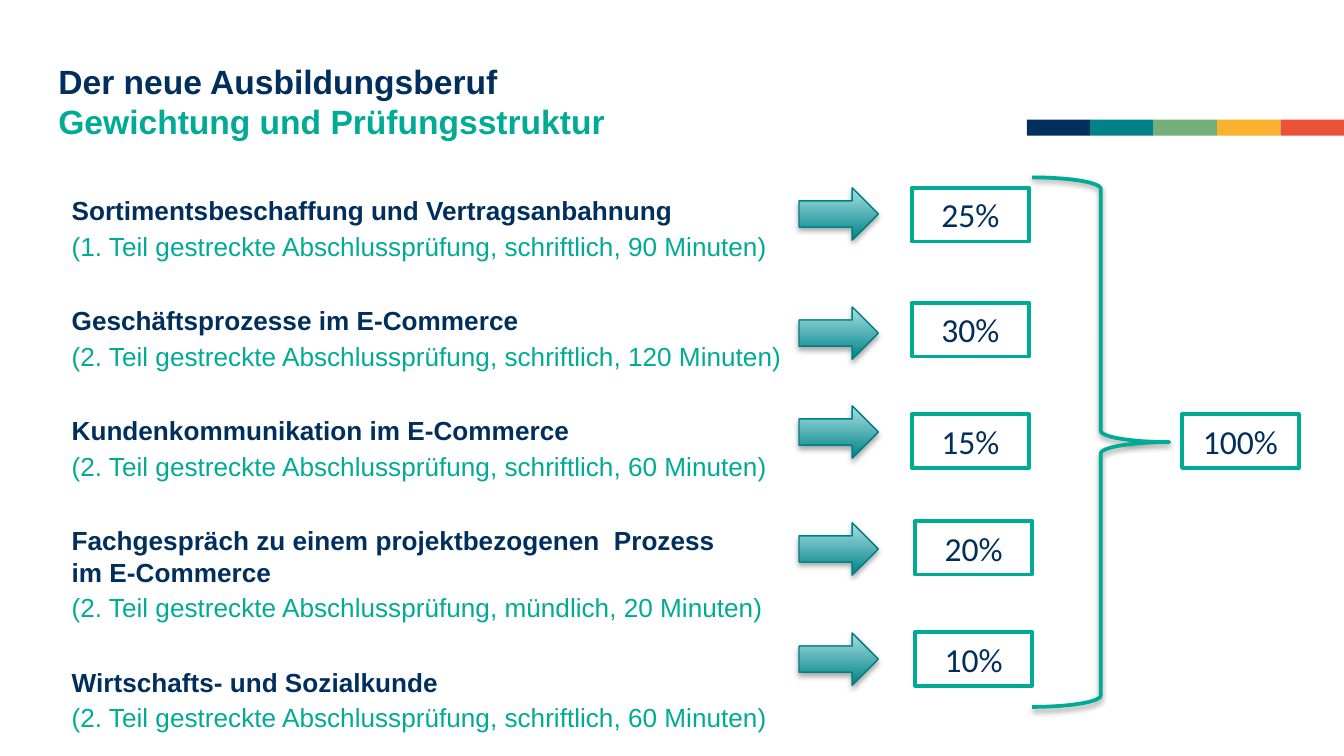
from lxml.etree import SubElement
from pptx import Presentation
from pptx.dml.color import RGBColor
from pptx.enum.shapes import MSO_SHAPE as Shape
from pptx.enum.text import MSO_ANCHOR as Anchor, MSO_AUTO_SIZE as AutoSize, PP_ALIGN as Align
from pptx.oxml.ns import qn
from pptx.util import Inches, Pt

WIDTH = Inches(10)
HEIGHT = WIDTH * 9 // 16
NAVY, GREEN, TEAL, WHITE = "002F5D", "00AB96", "008286", "FFFFFF"
STRIPES = [NAVY, TEAL, "74AF78", "F9B22F", "EA5138"]
EXAMS = [
    (["Sortimentsbeschaffung und Vertragsanbahnung"],
     "(1. Teil gestreckte Abschlussprüfung, schriftlich, 90 Minuten)"),
    (["Geschäftsprozesse im E-Commerce"],
     "(2. Teil gestreckte Abschlussprüfung, schriftlich, 120 Minuten)"),
    (["Kundenkommunikation im E-Commerce"],
     "(2. Teil gestreckte Abschlussprüfung, schriftlich, 60 Minuten)"),
    (["Fachgespräch zu einem projektbezogenen  Prozess", "im E-Commerce"],
     "(2. Teil gestreckte Abschlussprüfung, mündlich, 20 Minuten)"),
    (["Wirtschafts- und Sozialkunde"],
     "(2. Teil gestreckte Abschlussprüfung, schriftlich, 60 Minuten)"),
]
ARROW_TOPS = [24.85, 40.6, 53.69, 69.16, 83.73]
WEIGHTS = [
    ("25%", 67.85, 24.85),
    ("30%", 67.85, 40.05),
    ("15%", 67.85, 54.8),
    ("20%", 68.1, 68.9),
    ("10%", 68.1, 83.6),
    ("100%", 87.95, 54.8),
]


def color(value):
    return RGBColor.from_string(value)


def area(left, top, width, height):
    return [round(share * side / 100) for share, side in
            zip((left, top, width, height), (WIDTH, HEIGHT, WIDTH, HEIGHT))]


def add_span(para, text, size, tint, bold=False, font="Arial"):
    span = para.add_run()
    span.text = text
    span.font.name = font
    span.font.size = Pt(size)
    span.font.bold = bold
    span.font.color.rgb = color(tint)


def add_frame(page, place):
    frame = page.shapes.add_textbox(*area(*place)).text_frame
    frame.word_wrap = True
    frame.vertical_anchor = Anchor.TOP
    return frame


def next_para(frame, first):
    return frame.paragraphs[0] if first else frame.add_paragraph()


def add_figure(page, kind, place, line=None, weight=0):
    figure = page.shapes.add_shape(kind, *area(*place))
    figure.shadow.inherit = False
    if line:
        figure.line.color.rgb = color(line)
        figure.line.width = Pt(weight)
    else:
        figure.line.fill.background()
    return figure


def fill_solid(figure, tint):
    figure.fill.solid()
    figure.fill.fore_color.rgb = color(tint)


def add_shadow(figure, opacity, distance):
    effects = figure._element.spPr.find(qn("a:effectLst"))
    shadow = SubElement(effects, qn("a:outerShdw"), blurRad=str(Pt(3.1)),
                        dist=str(Pt(distance)), dir="5400000", rotWithShape="0")
    tint = SubElement(shadow, qn("a:srgbClr"), val="000000")
    SubElement(tint, qn("a:alpha"), val=str(opacity * 1000))


def add_stripes(page):
    for index, tint in enumerate(STRIPES):
        stripe = add_figure(page, Shape.RECTANGLE, (76.4 + 4.72 * index, 15.82, 4.72, 2.13))
        fill_solid(stripe, tint)


def add_title(page):
    frame = add_frame(page, (4.35, 8.05, 69.3, 12.62))
    frame.margin_left = frame.margin_right = frame.margin_top = frame.margin_bottom = 0
    lines = [("Der neue Ausbildungsberuf", NAVY), ("Gewichtung und Prüfungsstruktur", GREEN)]
    for index, (text, tint) in enumerate(lines):
        add_span(next_para(frame, index == 0), text, 18, tint, bold=True)


def add_exams(page):
    frame = add_frame(page, (4.35, 24.89, 56.7, 71.47))
    for index, (heading, detail) in enumerate(EXAMS):
        para = next_para(frame, index == 0)
        para.space_before = Pt(23 if index else 0)
        for row, text in enumerate(heading):
            if row:
                para.add_line_break()
            add_span(para, text, 14, NAVY, bold=True)
        para = frame.add_paragraph()
        para.space_before = Pt(2.3)
        add_span(para, detail, 14, GREEN)


def add_arrow(page, top):
    arrow = add_figure(page, Shape.RIGHT_ARROW, (59.45, top, 5.9, 6.93), "007F83", 0.75)
    arrow.fill.gradient()
    arrow.fill.gradient_angle = 90
    for stop, tint in zip(arrow.fill.gradient_stops, (TEAL, "A7E0E4")):
        stop.color.rgb = color(tint)
    add_shadow(arrow, 35, 1.8)


def add_weight(page, text, left, top):
    box = add_figure(page, Shape.RECTANGLE, (left, top, 8.7, 7.11), GREEN, 2)
    fill_solid(box, WHITE)
    frame = box.text_frame
    frame.word_wrap = True
    frame.auto_size = AutoSize.SHAPE_TO_FIT_TEXT
    frame.vertical_anchor = Anchor.TOP
    para = frame.paragraphs[0]
    para.alignment = Align.CENTER
    add_span(para, text, 18, NAVY, font="Calibri")


def add_brace(page):
    brace = add_figure(page, Shape.RIGHT_BRACE, (76.8, 23.47, 10.2, 70.04), GREEN, 2)
    brace.fill.background()
    add_shadow(brace, 38, 1.6)


def main():
    deck = Presentation()
    deck.slide_width, deck.slide_height = WIDTH, HEIGHT
    page = deck.slides.add_slide(deck.slide_layouts[6])
    add_stripes(page)
    add_title(page)
    add_exams(page)
    for top in ARROW_TOPS:
        add_arrow(page, top)
    for text, left, top in WEIGHTS:
        add_weight(page, text, left, top)
    add_brace(page)
    deck.save("out.pptx")


if __name__ == "__main__":
    main()
